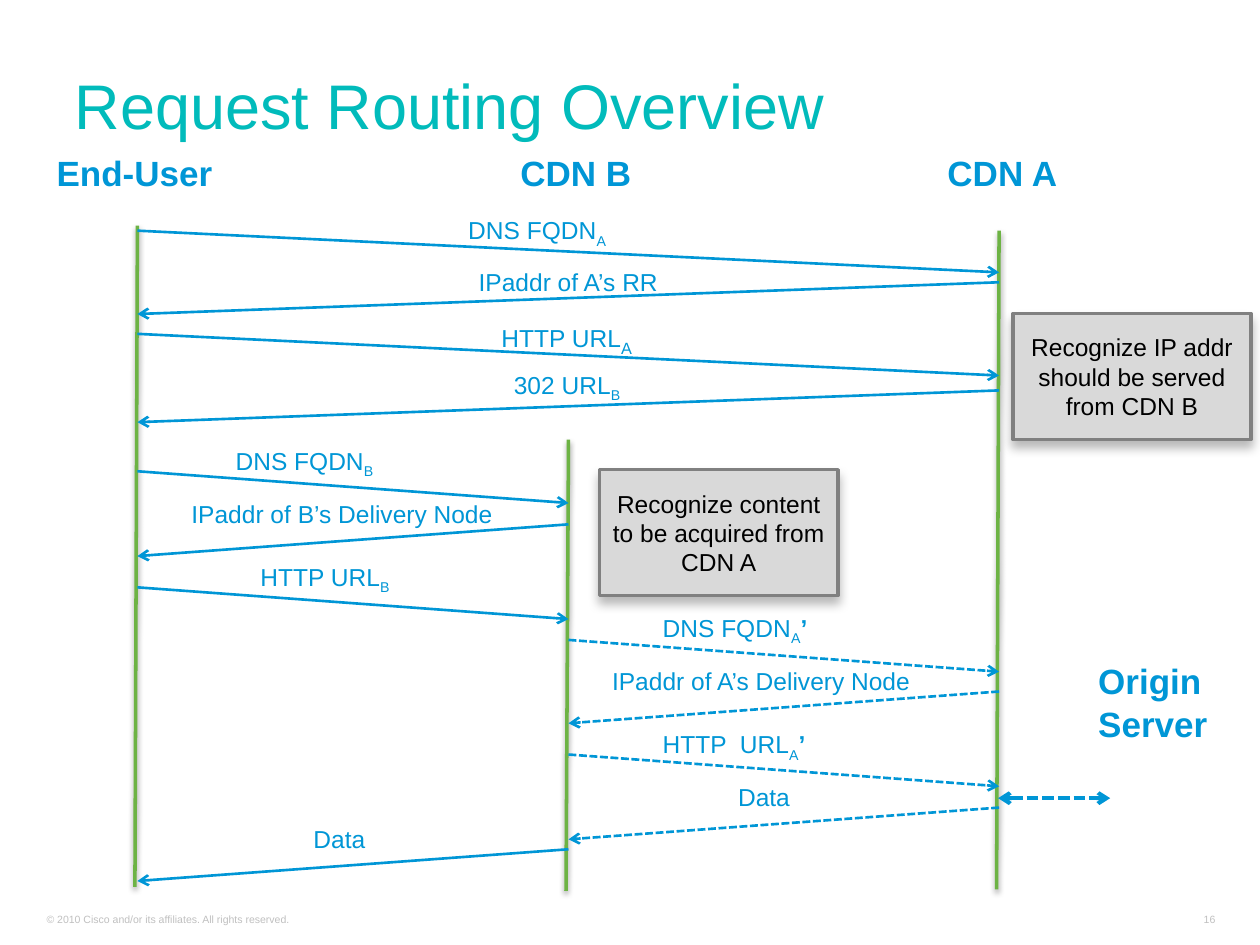
from dataclasses import dataclass
from typing import Optional

from lxml import etree
from pptx import Presentation
from pptx import util as u
from pptx.dml.color import RGBColor
from pptx.enum import dml, shapes, text
from pptx.oxml import ns


@dataclass(frozen=True)
class Theme:
    font: str = "Arial"
    title: str = "01BBBB"
    accent: str = "0096D6"
    lifeline: str = "6DB344"
    note_fill: str = "D9D9D9"
    note_line: str = "808080"
    note_text: str = "000000"
    footer: str = "C0C0C0"
    title_size: float = 36
    heading_size: float = 20
    label_size: float = 14
    footer_size: float = 6


@dataclass(frozen=True)
class Shadow:
    opacity: int
    blur: float
    distance: float


@dataclass(frozen=True)
class Actor:
    name: str
    left: float
    width: float
    x: float
    top: float
    bottom: float


@dataclass(frozen=True)
class Message:
    sender: Actor
    receiver: Actor
    y: float
    label: str
    left: float
    top: float
    width: float
    subscript: str = ""
    prime: str = ""
    drop: float = 0.64
    subscript_size: float = 14


@dataclass(frozen=True)
class Note:
    words: str
    left: float
    top: float


THEME = Theme()
LINE_SHADOW = Shadow(38, 3.1, 1.6)
NOTE_SHADOW = Shadow(27, 6, 4)

USER = Actor("End-User", 0.89, 3.68, 2.77, 4.55, 17.88)
CDN_B = Actor("CDN B", 10.24, 2.77, 11.46, 8.86, 17.96)
CDN_A = Actor("CDN A", 18.85, 2.72, 20.14, 4.65, 17.93)

MESSAGES = (
    Message(USER, CDN_A, 4.65, "DNS FQDN", 9.19, 4.22, 3.35, "A", drop=0.84),
    Message(CDN_A, USER, 5.69, "IPaddr of A’s RR", 9.4, 5.26, 4.17),
    Message(USER, CDN_A, 6.73, "HTTP URL", 9.86, 6.32, 3.25, "A",
            drop=0.84, subscript_size=16),
    Message(CDN_A, USER, 7.87, "302 URL", 10.11, 7.34, 2.69, "B"),
    Message(USER, CDN_B, 9.5, "DNS FQDN", 4.5, 8.86, 3.33, "B"),
    Message(CDN_B, USER, 10.57, "IPaddr of B’s Delivery Node", 3.61, 9.93, 6.63),
    Message(USER, CDN_B, 11.84, "HTTP URL", 5, 11.2, 3.28, "B"),
    Message(CDN_B, CDN_A, 12.9, "DNS FQDN", 13.11, 12.24, 3.45, "A", "’"),
    Message(CDN_A, CDN_B, 13.94, "IPaddr of A’s Delivery Node", 12.09, 13.31, 6.55),
    Message(CDN_B, CDN_A, 15.21, "HTTP  URL", 13.11, 14.58, 3.51, "A", "’"),
    Message(CDN_A, CDN_B, 16.28, "Data", 14.63, 15.65, 1.57),
    Message(CDN_B, USER, 17.12, "Data", 6.07, 16.48, 1.57),
)

NOTES = (
    Note("Recognize IP addr should be served from CDN B", 20.42, 6.32),
    Note("Recognize content to be acquired from CDN A", 12.09, 9.47),
)


def style(font, size: float, color: str, bold: bool = False) -> None:
    font.name = THEME.font
    font.size = u.Pt(size)
    font.bold = bold
    font.color.rgb = RGBColor.from_string(color)


def add_words(page, words: str, left: float, top: float, width: float, height: float,
              size: float, color: str, bold: bool = False):
    box = page.shapes.add_textbox(u.Cm(left), u.Cm(top), u.Cm(width), u.Cm(height))
    frame = box.text_frame
    frame.word_wrap = False
    frame.text = words
    for para in frame.paragraphs:
        for span in para.runs:
            style(span.font, size, color, bold)
    return box


def set_effects(properties, shadow: Optional[Shadow]) -> None:
    effects = properties.find(ns.qn("a:effectLst"))
    if effects is None:
        effects = etree.SubElement(properties, ns.qn("a:effectLst"))
    if shadow:
        outer = etree.SubElement(
            effects, ns.qn("a:outerShdw"), blurRad=str(u.Pt(shadow.blur)),
            dist=str(u.Pt(shadow.distance)), dir="5400000", rotWithShape="0")
        color = etree.SubElement(outer, ns.qn("a:srgbClr"), val="000000")
        etree.SubElement(color, ns.qn("a:alpha"), val=str(shadow.opacity * 1000))


def add_line(page, x1: float, y1: float, x2: float, y2: float, color: str, width: float,
             dashed: bool = False, arrows: tuple[str, ...] = (),
             shadow: Optional[Shadow] = None) -> None:
    connector = page.shapes.add_connector(
        shapes.MSO_CONNECTOR.STRAIGHT, u.Cm(x1), u.Cm(y1), u.Cm(x2), u.Cm(y2))
    line = connector.line
    line.color.rgb = RGBColor.from_string(color)
    line.width = u.Pt(width)
    if dashed:
        line.dash_style = dml.MSO_LINE.SQUARE_DOT
    properties = connector._element.spPr
    for end in arrows:
        etree.SubElement(properties.find(ns.qn("a:ln")), ns.qn(f"a:{end}"), type="arrow")
    set_effects(properties, shadow)


def add_actor(page, actor: Actor) -> None:
    add_words(page, actor.name, actor.left, 2.92, actor.width, 1.12,
              THEME.heading_size, THEME.accent, True)
    add_line(page, actor.x, actor.top, actor.x - 0.05, actor.bottom,
             THEME.lifeline, 2, shadow=LINE_SHADOW)


def add_message(page, message: Message) -> None:
    add_line(page, message.sender.x, message.y, message.receiver.x, message.y + message.drop,
             THEME.accent, 1.5, USER not in (message.sender, message.receiver), ("tailEnd",))
    box = add_words(page, message.label, message.left, message.top, message.width, 0.86,
                    THEME.label_size, THEME.accent)
    para = box.text_frame.paragraphs[0]
    if message.subscript:
        span = para.add_run()
        span.text = message.subscript
        style(span.font, message.subscript_size, THEME.accent)
        span._r.get_or_add_rPr().set("baseline", "-25000")
    if message.prime:
        span = para.add_run()
        span.text = message.prime
        style(span.font, THEME.label_size, THEME.accent, True)


def add_note(page, note: Note) -> None:
    box = page.shapes.add_shape(shapes.MSO_SHAPE.RECTANGLE, u.Cm(note.left), u.Cm(note.top),
                                u.Cm(4.8), u.Cm(2.54))
    box.shadow.inherit = False
    box.fill.solid()
    box.fill.fore_color.rgb = RGBColor.from_string(THEME.note_fill)
    box.line.color.rgb = RGBColor.from_string(THEME.note_line)
    box.line.width = u.Pt(2)
    set_effects(box._element.spPr, NOTE_SHADOW)
    frame = box.text_frame
    frame.word_wrap = True
    frame.vertical_anchor = text.MSO_ANCHOR.MIDDLE
    frame.text = note.words
    para = frame.paragraphs[0]
    para.alignment = text.PP_ALIGN.CENTER
    style(para.runs[0].font, THEME.label_size, THEME.note_text)


def add_title(page, words: str) -> None:
    title = page.shapes.title
    title.left, title.top, title.width, title.height = map(u.Cm, (1.25, 0.25, 23.04, 2.74))
    frame = title.text_frame
    frame.text = words
    frame.vertical_anchor = text.MSO_ANCHOR.BOTTOM
    para = frame.paragraphs[0]
    para.alignment = text.PP_ALIGN.LEFT
    para.line_spacing = 0.8
    style(para.runs[0].font, THEME.title_size, THEME.title)


def add_footer(page, words: str, left: float, width: float, alignment) -> None:
    box = add_words(page, words, left, 18.27, width, 0.48, THEME.footer_size, THEME.footer)
    frame = box.text_frame
    frame.margin_top = frame.margin_bottom = u.Cm(0.1)
    frame.vertical_anchor = text.MSO_ANCHOR.BOTTOM
    frame.word_wrap = True
    frame.paragraphs[0].alignment = alignment


def main() -> None:
    deck = Presentation()
    deck.slide_width, deck.slide_height = u.Cm(25.4), u.Cm(19.05)
    page = deck.slides.add_slide(deck.slide_layouts[5])
    add_title(page, "Request Routing Overview")
    for actor in (USER, CDN_B, CDN_A):
        add_actor(page, actor)
    for message in MESSAGES:
        add_message(page, message)
    add_words(page, "Origin\nServer", 21.89, 13.18, 2.74, 1.96,
              THEME.heading_size, THEME.accent, True)
    add_line(page, 20.12, 16.09, 22.38, 16.09, THEME.accent, 2.25, True, ("headEnd", "tailEnd"))
    for note in NOTES:
        add_note(page, note)
    add_footer(page, "© 2010 Cisco and/or its affiliates. All rights reserved.",
               0.69, 9.5, text.PP_ALIGN.LEFT)
    add_footer(page, "16", 23.55, 1.2, text.PP_ALIGN.RIGHT)
    deck.save("out.pptx")


if __name__ == "__main__":
    main()
